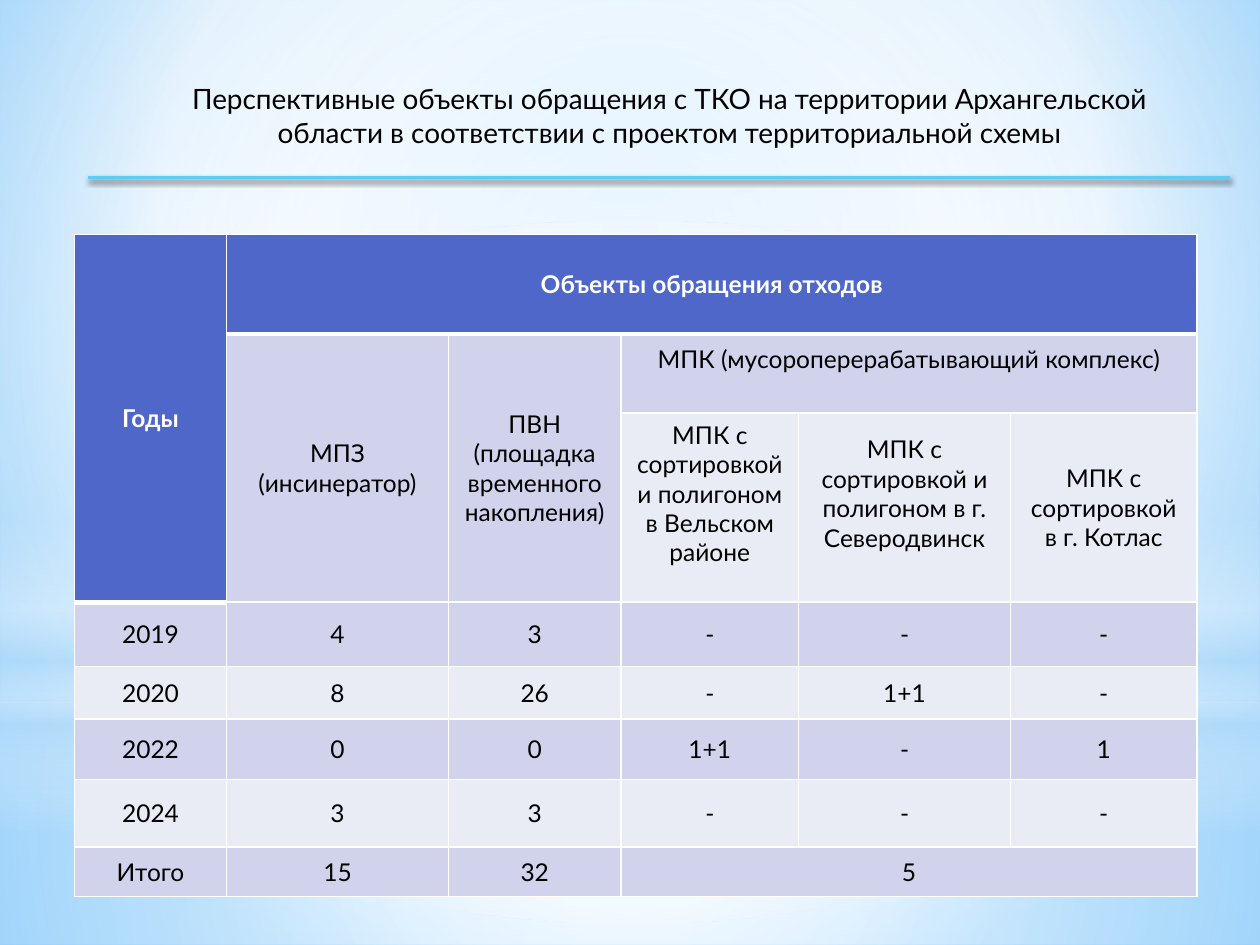
from pptx import Presentation
from pptx.dml.color import RGBColor
from pptx.enum.shapes import MSO_CONNECTOR, MSO_SHAPE
from pptx.enum.text import MSO_ANCHOR, PP_ALIGN
from pptx.oxml import parse_xml
from pptx.oxml.ns import nsdecls, qn
from pptx.util import Cm, Pt

RECTANGLE, OVAL = MSO_SHAPE.RECTANGLE, MSO_SHAPE.OVAL
STRAIGHT = MSO_CONNECTOR.STRAIGHT
CENTER, MIDDLE = PP_ALIGN.CENTER, MSO_ANCHOR.MIDDLE

WHITE = RGBColor(0xFF, 0xFF, 0xFF)
BLACK = RGBColor(0, 0, 0)
HEADER = RGBColor(0x4E, 0x67, 0xC8)
BAND_DARK = RGBColor(0xD0, 0xD3, 0xEB)
BAND_LIGHT = RGBColor(0xE9, 0xEB, 0xF5)
RULE = RGBColor(0x5E, 0xCC, 0xF3)
SKY = RGBColor(0x9E, 0xD5, 0xFF)
DEEP_SKY = RGBColor(0x5B, 0xB9, 0xFF)
HAZE = RGBColor(0xB4, 0xDC, 0xFA)

FONT = "Lato"
TITLE = ("Перспективные объекты обращения с ТКО на территории Архангельской "
         "области в соответствии с проектом территориальной схемы")
ROWS = [
    ["Годы", "Объекты обращения отходов", "", "", "", ""],
    ["", "МПЗ (инсинератор)", "ПВН (площадка временного накопления)",
     "МПК (мусороперерабатывающий комплекс)", "", ""],
    ["", "", "", "МПК с сортировкой и полигоном в Вельском районе",
     "МПК с сортировкой и полигоном в г. Северодвинск",
     "МПК с сортировкой в г. Котлас"],
    ["2019", "4", "3", "-", "-", "-"],
    ["2020", "8", "26", "-", "1+1", "-"],
    ["2022", "0", "0", "1+1", "-", "1"],
    ["2024", "3", "3", "-", "-", "-"],
    ["Итого", "15", "32", "5", "", ""],
]
COLUMN_WIDTHS = [3.07, 4.47, 3.48, 3.58, 4.27, 3.76]
ROW_HEIGHTS = [2, 1.6, 3.81, 1.3, 1.05, 1.22, 1.36, 1]
# First and last cell of each merged area, as (row, column)
MERGES = [((0, 0), (2, 0)), ((0, 1), (0, 5)), ((1, 1), (2, 1)),
          ((1, 2), (2, 2)), ((1, 3), (1, 5)), ((7, 3), (7, 5))]
RAISED_CELLS = [(1, 3), (2, 3), (2, 4)]

CENTRE = (50, 50, 50, 50)
# Kind, position and size, stops (percent, colour, opacity), focus
OVERLAYS = [
    (RECTANGLE, (0, 14.17, 25.4, 4.88),
     [(0, WHITE, 91), (37, WHITE, 76), (100, HAZE, 79)], CENTRE),
    (RECTANGLE, (0, 0, 25.4, 14.17),
     [(0, WHITE, 89), (48, WHITE, 62), (100, HAZE, 79)], CENTRE),
    (RECTANGLE, (0, 10.46, 25.4, 6.35),
     [(0, WHITE, 0), (29, WHITE, 30), (45, HAZE, 40), (55, WHITE, 26),
      (65, HAZE, 60), (100, WHITE, 0)], None),
    (OVAL, (0, 4.45, 25.4, 14.17), [(0, WHITE, 100), (56, WHITE, 0)], CENTRE),
]


def set_gradient(properties, stops, focus):
    """Replace a solid fill by a gradient: round with a focus, else vertical."""
    stop_xml = "".join(
        f'<a:gs pos="{position * 1000}"><a:srgbClr val="{color}">'
        f'<a:alpha val="{opacity * 1000}"/></a:srgbClr></a:gs>'
        for position, color, opacity in stops)
    if focus:
        sides = " ".join(f'{side}="{value * 1000}"' for side, value in zip("ltrb", focus))
        direction = f'<a:path path="circle"><a:fillToRect {sides}/></a:path>'
    else:
        direction = '<a:lin ang="5400000" scaled="0"/>'
    gradient = parse_xml(f'<a:gradFill {nsdecls("a")} rotWithShape="1">'
                         f'<a:gsLst>{stop_xml}</a:gsLst>{direction}</a:gradFill>')
    properties.replace(properties.find(qn("a:solidFill")), gradient)


def add_background(slide):
    slide.background.fill.solid()
    slide.background.fill.fore_color.rgb = WHITE
    set_gradient(slide.element.find(".//" + qn("p:bgPr")),
                 [(0, SKY, 100), (60, WHITE, 100), (100, DEEP_SKY, 100)],
                 (20, 10, 20, 60))
    for kind, box, stops, focus in OVERLAYS:
        shape = slide.shapes.add_shape(kind, *map(Cm, box))
        shape.shadow.inherit = False
        shape.line.fill.background()
        shape.fill.solid()
        shape.fill.fore_color.rgb = WHITE
        set_gradient(shape.element.spPr, stops, focus)


def format_text(text_frame, size, color, bold=False):
    paragraph = text_frame.paragraphs[0]
    paragraph.alignment = CENTER
    for run in paragraph.runs:
        run.font.name = FONT
        run.font.size = Pt(size)
        run.font.bold = bold
        run.font.color.rgb = color


def add_title(slide):
    box = slide.shapes.add_textbox(Cm(2.9), Cm(1.52), Cm(21.2), Cm(1.63))
    box.text_frame.word_wrap = True
    box.text_frame.text = TITLE
    format_text(box.text_frame, 16, BLACK)


def add_rule(slide):
    """Draw the line under the title with its soft shadow."""
    rule = slide.shapes.add_connector(STRAIGHT, Cm(1.78), Cm(3.58), Cm(24.8), Cm(3.58))
    rule.line.color.rgb = RULE
    rule.line.width = Pt(2)
    rule.element.spPr.append(parse_xml(
        f'<a:effectLst {nsdecls("a")}><a:outerShdw blurRad="{Pt(3.1)}" '
        f'dist="{Pt(1.8)}" dir="5400000" rotWithShape="0"><a:srgbClr val="{BLACK}">'
        '<a:alpha val="45000"/></a:srgbClr></a:outerShdw></a:effectLst>'))


def set_borders(cell, top, bottom):
    properties = cell._tc.get_or_add_tcPr()
    for side, width in (("L", 1), ("R", 1), ("T", top), ("B", bottom)):
        properties.append(parse_xml(
            f'<a:ln{side} {nsdecls("a")} w="{Pt(width)}"><a:solidFill>'
            f'<a:srgbClr val="{WHITE}"/></a:solidFill></a:ln{side}>'))


def format_cell(cell, row, column):
    last_header_row = 2 if column == 0 else 0
    is_header = row <= last_header_row
    set_borders(cell, 3 if row == last_header_row + 1 else 1,
                3 if row == last_header_row or (row, column) == (0, 0) else 1)
    cell.fill.solid()
    band = BAND_DARK if row % 2 else BAND_LIGHT
    cell.fill.fore_color.rgb = HEADER if is_header else band
    cell.vertical_anchor = MIDDLE
    if (row, column) in RAISED_CELLS:
        cell.margin_bottom = Cm(0.7)
    format_text(cell.text_frame, 14, WHITE if is_header else BLACK, is_header)


def add_facility_table(slide):
    table = slide.shapes.add_table(
        len(ROWS), len(COLUMN_WIDTHS), Cm(1.5), Cm(4.73),
        Cm(sum(COLUMN_WIDTHS)), Cm(sum(ROW_HEIGHTS))).table
    for column, width in zip(table.columns, COLUMN_WIDTHS):
        column.width = Cm(width)
    for row, height in zip(table.rows, ROW_HEIGHTS):
        row.height = Cm(height)
    for row, texts in enumerate(ROWS):
        for column, text in enumerate(texts):
            cell = table.cell(row, column)
            cell.text_frame.text = text
            format_cell(cell, row, column)
    for first, last in MERGES:
        table.cell(*first).merge(table.cell(*last))


def main():
    presentation = Presentation()
    presentation.slide_width, presentation.slide_height = Cm(25.4), Cm(19.05)
    slide = presentation.slides.add_slide(presentation.slide_layouts[6])
    add_background(slide)
    add_facility_table(slide)
    add_title(slide)
    add_rule(slide)
    presentation.save("out.pptx")


if __name__ == "__main__":
    main()
